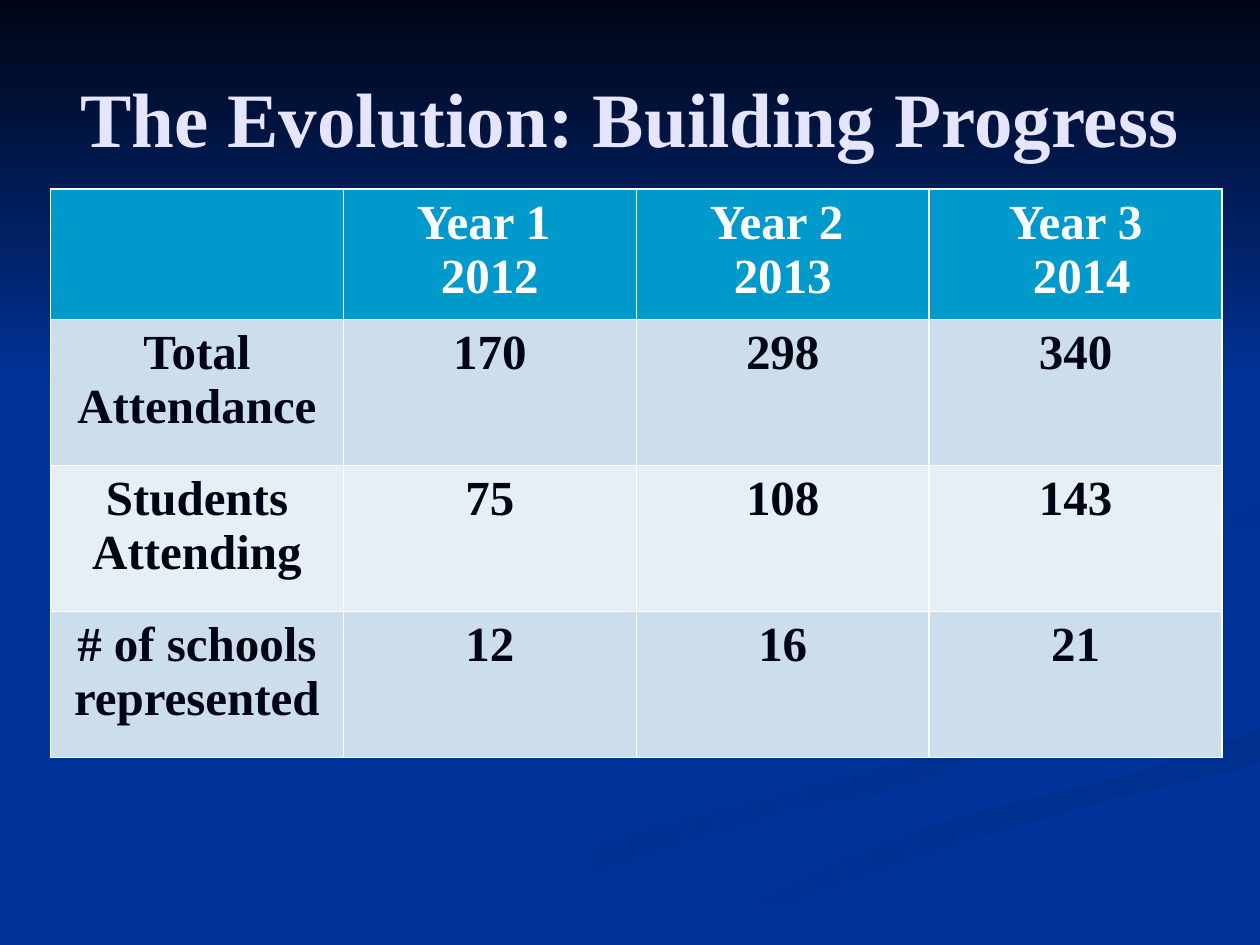
from math import hypot

from pptx import Presentation
from pptx.dml.color import RGBColor
from pptx.enum.text import MSO_ANCHOR, PP_ALIGN
from pptx.util import Pt

CENTER = PP_ALIGN.CENTER
MIDDLE = MSO_ANCHOR.MIDDLE
FONT = "Times New Roman"
BLANK_LAYOUT = 6
STEPS_PER_SPAN = 6

COLORS = {
    "background": "003399",
    "night": "000514",
    "title": "E5E5FF",
    "white": "FFFFFF",
    "header": "0099CC",
    "band_dark": "CCDEEC",
    "band_light": "E7EFF6",
    "ribbon_faint": "003193",
    "ribbon_soft": "003091",
    "ribbon_mid": "002F8E",
    "ribbon_deep": "002F8C",
}

# Each ribbon: start colour, end colour, gradient angle, stations (x, y, thickness).
RIBBONS = {
    "left": ("background", "ribbon_faint", 0, [
        (-10, 388, 20), (114, 327, 19), (228, 292, 14), (325, 267, 14),
        (353, 241, 9), (335, 227, 3), (240, 195, 3), (196, 166, 2)]),
    "middle": ("background", "ribbon_faint", 45, [
        (430, 266, 2), (452, 252, 12), (440, 230, 10), (396, 214, 9),
        (324, 190, 8), (306, 166, 2)]),
    "lower": ("ribbon_deep", "background", 90, [
        (140, 386, 20), (251, 334, 17), (375, 294, 14), (434, 278, 14),
        (520, 255, 19)]),
    "main": ("background", "background", 0, [
        (120, 386, 12), (262, 318, 10), (346, 291, 8), (430, 267, 14),
        (480, 235, 28), (458, 220, 20), (390, 198, 14), (328, 160, 40),
        (350, 143, 15), (430, 130, 8), (520, 114, 10)]),
    "right": ("ribbon_soft", "background", 45, [
        (370, 189, 2), (356, 172, 12), (372, 154, 14), (430, 138, 14),
        (520, 125, 13)]),
    "upper": ("ribbon_mid", "background", 45, [
        (228, 190, 2), (205, 165, 12), (225, 148, 12), (334, 125, 13),
        (405, 102, 14), (426, 76, 6), (395, 37, 2), (333, 0, 1)]),
}

PROGRESS = [
    ["", "Year 1 \n2012", "Year 2 \n2013", "Year 3\n 2014"],
    ["Total Attendance", "170", "298", "340"],
    ["Students Attending", "75", "108", "143"],
    ["# of schools represented", "12", "16", "21"],
]


def color(name):
    """Return the named colour as an RGB value."""
    return RGBColor.from_string(COLORS[name])


def write_text(frame, text, *, size, ink, bold=True, align=CENTER):
    """Write one paragraph per line of text in the given format."""
    frame.word_wrap = True
    frame.text = text
    for paragraph in frame.paragraphs:
        paragraph.alignment = align
        for run in paragraph.runs:
            run.font.name = FONT
            run.font.size = Pt(size)
            run.font.bold = bold
            run.font.color.rgb = color(ink)


def smooth(stations):
    """Return stations along a Catmull-Rom curve through the given ones."""
    padded = [stations[0], *stations, stations[-1]]
    curve = []
    for span in zip(padded, padded[1:], padded[2:], padded[3:]):
        for step in range(STEPS_PER_SPAN):
            t = step / STEPS_PER_SPAN
            curve.append(tuple(
                b + t * (c - a) / 2
                + t**2 * (2 * a - 5 * b + 4 * c - d) / 2
                + t**3 * (3 * b - a - 3 * c + d) / 2
                for a, b, c, d in zip(*span)
            ))
    return curve + [stations[-1]]


def ribbon_outline(stations, width, height):
    """Offset a smooth centre line to both sides and keep it inside the box."""
    curve = smooth(stations)
    one_side, other_side = [], []
    for before, (x, y, thickness), after in zip(curve[:1] + curve, curve, curve[1:] + curve[-1:]):
        dx, dy = after[0] - before[0], after[1] - before[1]
        reach = thickness / 2 / hypot(dx, dy)
        for side, sign in ((one_side, 1), (other_side, -1)):
            edge_x, edge_y = x - sign * dy * reach, y + sign * dx * reach
            side.append((min(max(edge_x, 0), width), min(max(edge_y, 0), height)))
    return one_side + other_side[::-1]


def add_outline(slide, left, top, points, start, end, angle):
    """Add a closed outline, filled with a clockwise-angled gradient or a plain colour."""
    corners = [(Pt(x), Pt(y)) for x, y in points]
    builder = slide.shapes.build_freeform(*corners[0])
    builder.add_line_segments(corners[1:], close=True)
    outline = builder.convert_to_shape(Pt(left), Pt(top))
    outline.shadow.inherit = False
    outline.line.fill.background()
    if start == end:
        outline.fill.solid()
        outline.fill.fore_color.rgb = color(start)
        return
    outline.fill.gradient()
    outline.fill.gradient_angle = -angle % 360
    for stop, name in zip(outline.fill.gradient_stops, (start, end)):
        stop.color.rgb = color(name)


def add_ribbons(slide, left, top, width, height):
    """Lay the flowing ribbons over the background, from back to front."""
    for start, end, angle, stations in RIBBONS.values():
        points = ribbon_outline(stations, width, height)
        add_outline(slide, left, top, points, start, end, angle)


def add_sky(slide, left, top, width, height):
    """Darken the top of the slide."""
    corners = [(0, 0), (0, height), (width, height), (width, 0)]
    add_outline(slide, left, top, corners, "night", "background", 90)


def add_title(slide, left, top, width, height):
    """Add the slide title, centred in its box."""
    title = slide.shapes.add_textbox(Pt(left), Pt(top), Pt(width), Pt(height))
    title.text_frame.vertical_anchor = MIDDLE
    write_text(title.text_frame, "The Evolution: Building Progress", size=44, ink="title")


def add_progress_table(slide, left, top, width, height, header_height=69):
    """Add the attendance table with a header row and banded rows."""
    row_count, column_count = len(PROGRESS), len(PROGRESS[0])
    body_height = (height - header_height) / (row_count - 1)
    table = slide.shapes.add_table(
        row_count, column_count, Pt(left), Pt(top), Pt(width), Pt(height)
    ).table
    for column in table.columns:
        column.width = Pt(width / column_count)
    for index, (row, values) in enumerate(zip(table.rows, PROGRESS)):
        if index == 0:
            row_height, band, ink = header_height, "header", "white"
        else:
            row_height, band, ink = body_height, ("band_light", "band_dark")[index % 2], "night"
        row.height = Pt(row_height)
        for cell, value in zip(row.cells, values):
            cell.fill.solid()
            cell.fill.fore_color.rgb = color(band)
            write_text(cell.text_frame, value, size=28, ink=ink)


def main():
    """Build the progress slide and save it."""
    deck = Presentation()
    deck.slide_width, deck.slide_height = Pt(720), Pt(540)
    slide = deck.slides.add_slide(deck.slide_layouts[BLANK_LAYOUT])
    slide.background.fill.solid()
    slide.background.fill.fore_color.rgb = color("background")
    add_ribbons(slide, 216, 168, 504, 371)
    add_sky(slide, 0, 0, 720, 222)
    add_title(slide, 36, 21.6, 648, 90)
    add_progress_table(slide, 28.8, 108, 669.6, 319.5)
    deck.save("out.pptx")


if __name__ == "__main__":
    main()
